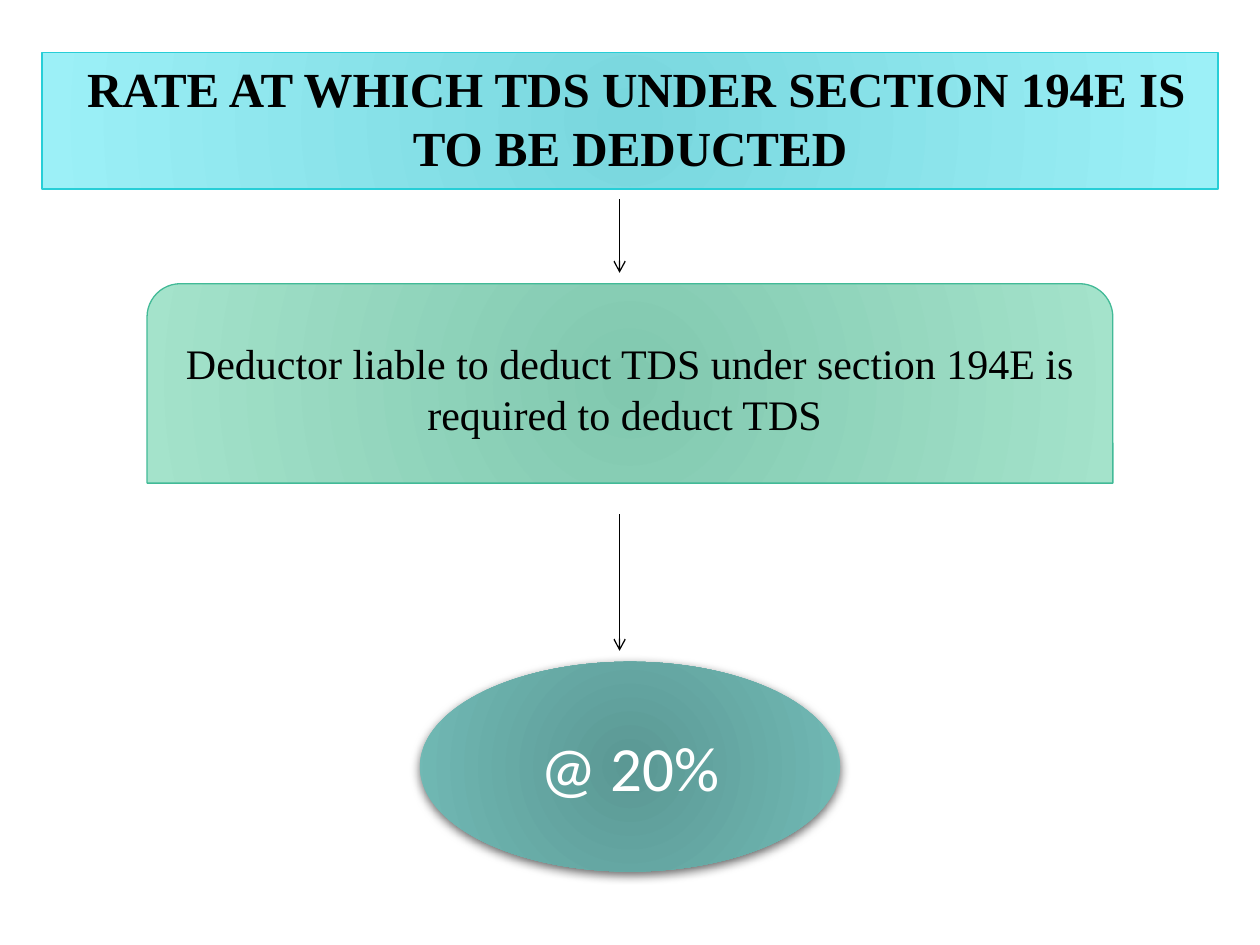
from lxml.etree import SubElement
from pptx import Presentation
from pptx.dml.color import RGBColor
from pptx.enum.shapes import MSO_CONNECTOR, MSO_SHAPE
from pptx.enum.text import MSO_ANCHOR, MSO_AUTO_SIZE, PP_ALIGN
from pptx.oxml.ns import qn
from pptx.util import Cm, Pt

SLIDE_WIDTH, SLIDE_HEIGHT = 25.4, 19.05
ARROW_X = 12.49
COLORS = {
    "black": "000000", "white": "FFFFFF",
    "cyan_inner": "79D7DE", "cyan_outer": "9CF0F7", "cyan_line": "27CED7",
    "green_inner": "81C8AF", "green_outer": "A4E3CB", "green_line": "42BA97",
    "teal_inner": "5B9894", "teal_outer": "72BBB6",
}
SERIF = "Times New Roman"


def rgb(name):
    return RGBColor.from_string(COLORS[name])


class FlowSlide:
    """Style and current slide of a top-down flow chart."""

    line_width = Pt(0.75)

    def __init__(self, deck):
        self.slide = deck.slides.add_slide(deck.slide_layouts[5])

    def place(self, box, top, width, height):
        """Centre the box across the slide."""
        bounds = {"left": (SLIDE_WIDTH - width) / 2, "top": top,
                  "width": width, "height": height}
        for side, value in bounds.items():
            setattr(box, side, Cm(value))

    def paint(self, box, hue, outlined=True):
        """Fill with a radial gradient, dark in the middle."""
        box.fill.gradient()
        for stop, part in zip(box.fill.gradient_stops, ("inner", "outer")):
            stop.color.rgb = rgb(f"{hue}_{part}")
        gradient = box._element.spPr.find(qn("a:gradFill"))
        gradient.remove(gradient.find(qn("a:lin")))
        radial = SubElement(gradient, qn("a:path"), {"path": "circle"})
        SubElement(radial, qn("a:fillToRect"), {side: "100000" for side in "ltrb"})
        if outlined:
            box.line.color.rgb = rgb(f"{hue}_line")
            box.line.width = self.line_width
        else:
            box.line.fill.background()

    def set_text(self, box, text, color="black", anchor=MSO_ANCHOR.MIDDLE, **font_format):
        frame = box.text_frame
        frame.text = text
        frame_format = {"word_wrap": True, "auto_size": MSO_AUTO_SIZE.NONE,
                        "vertical_anchor": anchor}
        for key, value in frame_format.items():
            setattr(frame, key, value)
        paragraph = frame.paragraphs[0]
        paragraph.alignment = PP_ALIGN.CENTER
        font = paragraph.runs[0].font
        for key, value in font_format.items():
            setattr(font, key, value)
        font.color.rgb = rgb(color)

    def title(self, text, bounds, hue, **font_format):
        heading = self.slide.shapes.title
        self.place(heading, *bounds)
        self.paint(heading, hue)
        self.set_text(heading, text, anchor=MSO_ANCHOR.TOP, **font_format)

    def step(self, preset, text, bounds, hue, outlined=True, **font_format):
        box = self.slide.shapes.add_shape(preset, 0, 0, 0, 0)
        box.shadow.inherit = False
        self.place(box, *bounds)
        self.paint(box, hue, outlined)
        self.set_text(box, text, **font_format)
        return box

    def soft_shadow(self, box):
        effects = box._element.spPr.find(qn("a:effectLst"))
        shadow = SubElement(effects, qn("a:outerShdw"), blurRad=str(Pt(6)),
                            dist=str(Pt(2)), dir="5400000", rotWithShape="0")
        color = SubElement(shadow, qn("a:srgbClr"), val=COLORS["black"])
        SubElement(color, qn("a:alpha"), val="60000")

    def arrow(self, start, end):
        link = self.slide.shapes.add_connector(
            MSO_CONNECTOR.STRAIGHT, Cm(ARROW_X), Cm(start), Cm(ARROW_X), Cm(end))
        link.line.color.rgb = rgb("black")
        link.line.width = self.line_width
        properties = link._element.spPr
        SubElement(properties.find(qn("a:ln")), qn("a:tailEnd"), type="arrow")
        SubElement(properties, qn("a:effectLst"))


def main():
    deck = Presentation()
    deck.slide_width, deck.slide_height = Cm(SLIDE_WIDTH), Cm(SLIDE_HEIGHT)
    flow = FlowSlide(deck)

    flow.title(" RATE AT WHICH TDS UNDER SECTION 194E IS TO BE DEDUCTED",
               (1.06, 23.71, 2.75), "cyan", name=SERIF, size=Pt(28), bold=True)
    flow.step(MSO_SHAPE.ROUND_2_SAME_RECTANGLE,
              "Deductor liable to deduct TDS under section 194E is required to deduct TDS ",
              (5.72, 19.47, 4.02), "green", name=SERIF, size=Pt(24))
    for start, end in ((4.02, 5.5), (10.37, 13.12)):
        flow.arrow(start, end)
    rate = flow.step(MSO_SHAPE.OVAL, "@ 20%", (13.34, 8.47, 4.23), "teal",
                     outlined=False, color="white", name="Calibri", size=Pt(36))
    flow.soft_shadow(rate)
    deck.save("out.pptx")


if __name__ == "__main__":
    main()
